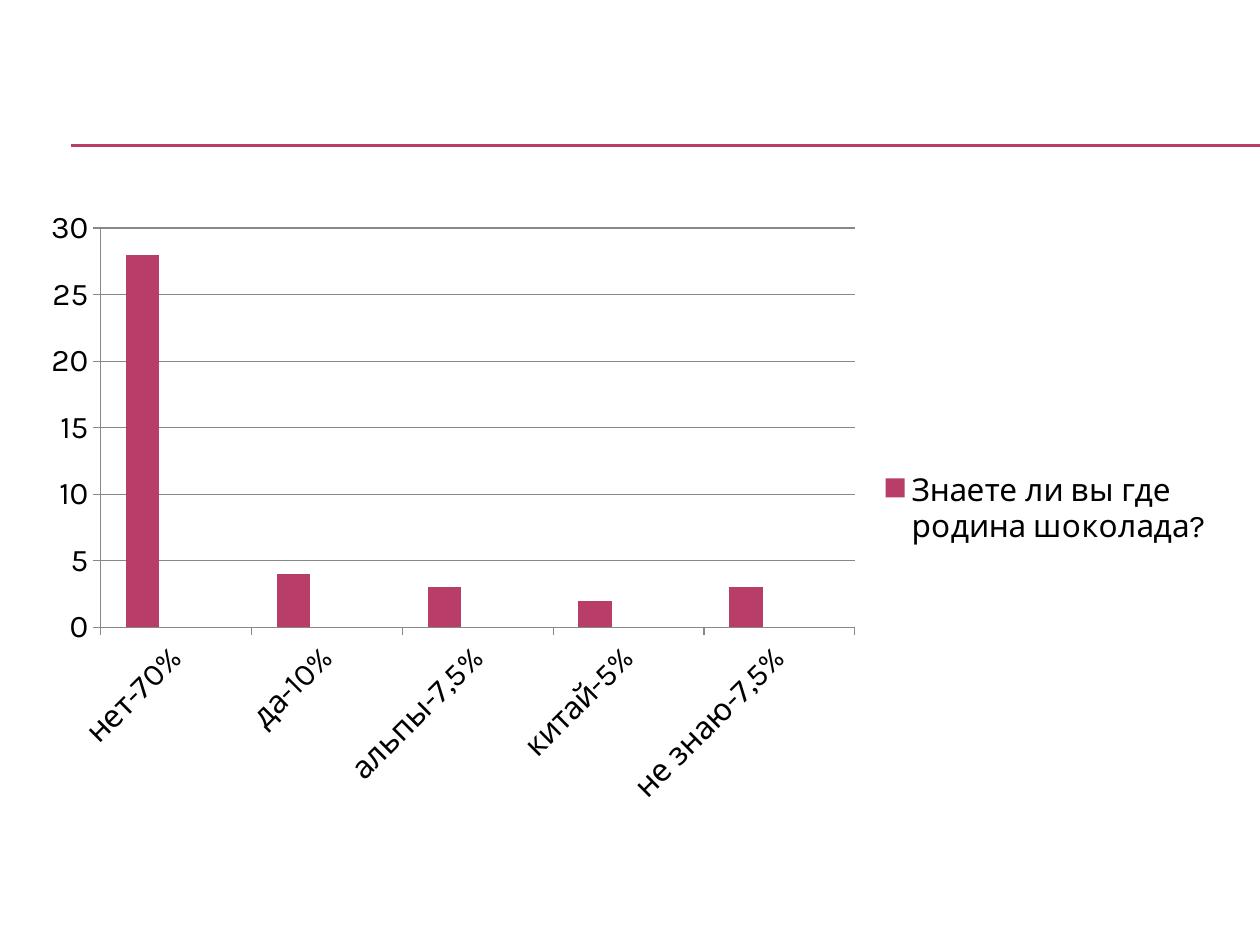
from lxml import etree
from pptx import Presentation
from pptx.chart.data import CategoryChartData
from pptx.dml.color import RGBColor
from pptx.enum.chart import XL_CHART_TYPE, XL_LEGEND_POSITION, XL_TICK_MARK
from pptx.enum.shapes import MSO_CONNECTOR
from pptx.oxml import parse_xml
from pptx.oxml.ns import nsdecls, qn
from pptx.util import Pt

CATEGORIES = ["нет-70%", "да-10%", "альпы-7,5%", "китай-5%", "не знаю-7,5%"]
SERIES = [
    ("Знаете ли вы где родина шоколада?", [28, 4, 3, 2, 3]),
    ("Series 2", [None] * 5),
    ("Series 3", [None] * 5),
]
HIDDEN_LEGEND_ENTRIES = [1, 2]

BERRY = RGBColor(0xB8, 0x3D, 0x68)
PURPLE = RGBColor(0xAC, 0x66, 0xBB)
ORANGE = RGBColor(0xDE, 0x6C, 0x36)
BLACK = RGBColor(0, 0, 0)
GREY = RGBColor(0x88, 0x88, 0x88)
SERIES_COLORS = [BERRY, PURPLE, ORANGE]
FONT = "Karla"

CLUSTERED = XL_CHART_TYPE.COLUMN_CLUSTERED
RIGHT = XL_LEGEND_POSITION.RIGHT
OUTSIDE = XL_TICK_MARK.OUTSIDE
STRAIGHT = MSO_CONNECTOR.STRAIGHT

PX = 914400 // 126
SLIDE_W, SLIDE_H = 1260, 945
RULE_LEFT, RULE_YS = 71, (145, 146)
CHART = (29, 197, 1197, 624)
PLOT = (103, 228, 749, 402)


def px(n):
    return int(n * PX)


def format_font(font, size=18, color=BLACK, name=FONT):
    font.size, font.name = Pt(size), name
    font.color.rgb = color


def add_rule(slide, y):
    line = slide.shapes.add_connector(STRAIGHT, px(RULE_LEFT), px(y), px(SLIDE_W), px(y))
    line.line.color.rgb = BERRY
    line.line.width = Pt(0.75)
    etree.SubElement(line._element.spPr, qn("a:effectLst"))


def place_plot(chart):
    """Fix the inner plot area as fractions of the chart frame."""
    left, top, width, height = CHART
    fractions = {
        "x": (PLOT[0] - left) / width,
        "y": (PLOT[1] - top) / height,
        "w": PLOT[2] / width,
        "h": PLOT[3] / height,
    }
    parts = '<c:layoutTarget val="inner"/><c:xMode val="edge"/><c:yMode val="edge"/>'
    parts += "".join(f'<c:{k} val="{v:.2f}"/>' for k, v in fractions.items())
    layout = parse_xml(
        f'<c:layout {nsdecls("c")}><c:manualLayout>{parts}</c:manualLayout></c:layout>')
    plot_area = chart._chartSpace.chart.plotArea
    for old in plot_area.findall(qn("c:layout")):
        plot_area.remove(old)
    plot_area.insert(0, layout)


def format_legend(chart):
    chart.has_legend = True
    legend = chart.legend
    legend.position = RIGHT
    legend.include_in_layout = False
    format_font(legend.font)
    for place, idx in enumerate(HIDDEN_LEGEND_ENTRIES, start=1):
        entry = parse_xml(
            f'<c:legendEntry {nsdecls("c")}><c:idx val="{idx}"/><c:delete val="1"/></c:legendEntry>')
        legend._element.insert(place, entry)


def format_axes(chart):
    for axis in (chart.category_axis, chart.value_axis):
        axis.major_tick_mark = OUTSIDE
        axis.format.line.color.rgb = GREY
        format_font(axis.tick_labels.font)
    labels = chart.category_axis._element.find(qn("c:txPr"))
    labels.find(qn("a:bodyPr")).set("rot", str(-45 * 60000))
    values = chart.value_axis
    values.minimum_scale, values.maximum_scale, values.major_unit = 0, 30, 5
    values.has_major_gridlines = True
    values.major_gridlines.format.line.color.rgb = GREY


def add_survey_chart(slide):
    data = CategoryChartData()
    data.categories = CATEGORIES
    for name, values in SERIES:
        data.add_series(name, values)
    chart = slide.shapes.add_chart(CLUSTERED, *map(px, CHART), data).chart
    chart.has_title = False
    format_font(chart.font)
    plot = chart.plots[0]
    plot.vary_by_categories = False
    plot.gap_width = 150
    for series, color in zip(plot.series, SERIES_COLORS):
        series.format.fill.solid()
        series.format.fill.fore_color.rgb = color
    format_axes(chart)
    format_legend(chart)
    place_plot(chart)


def main():
    prs = Presentation()
    prs.slide_width, prs.slide_height = px(SLIDE_W), px(SLIDE_H)
    slide = prs.slides.add_slide(prs.slide_layouts[6])
    for y in RULE_YS:
        add_rule(slide, y)
    add_survey_chart(slide)
    prs.save("out.pptx")


if __name__ == "__main__":
    main()
